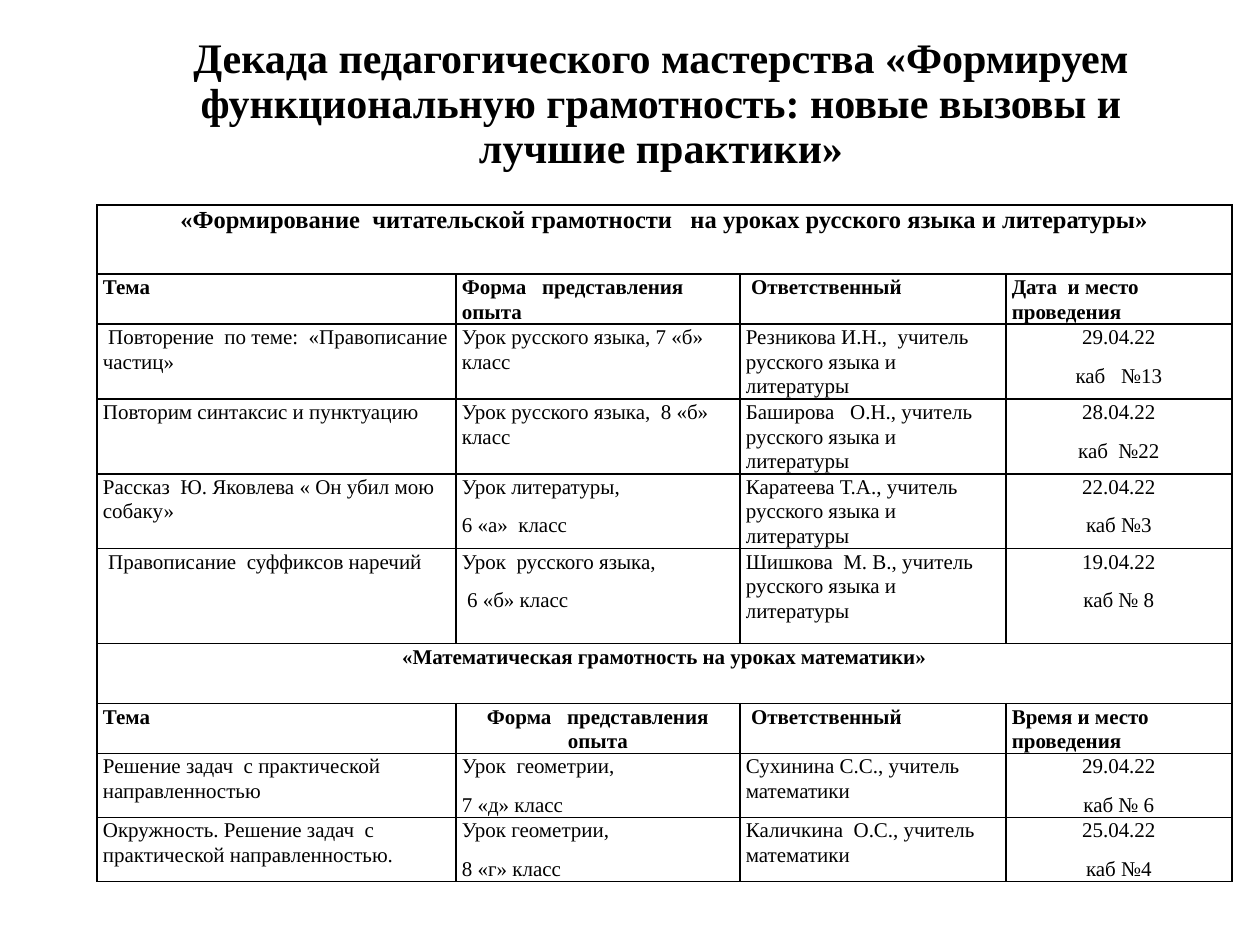
from lxml.etree import SubElement
from pptx import Presentation
from pptx.dml.color import RGBColor
from pptx.enum.text import MSO_ANCHOR, MSO_AUTO_SIZE, PP_ALIGN
from pptx.oxml.ns import qn
from pptx.util import Pt

PX = 914400 // 126
FONT = "Times New Roman"
BLACK = "000000"
LEFT, CENTER = PP_ALIGN.LEFT, PP_ALIGN.CENTER

TITLE = ("Декада педагогического мастерства «Формируем функциональную "
         "грамотность: новые вызовы и лучшие практики»")
SECTIONS = [
    {
        "heading": "«Формирование  читательской грамотности   на уроках русского языка и литературы»",
        "heading_size": 14,
        "columns": ["Тема", "Форма   представления опыта", " Ответственный", "Дата  и место проведения"],
        "column_aligns": [LEFT, LEFT, LEFT, LEFT],
        "lessons": [
            [" Повторение  по теме:  «Правописание частиц»", "Урок русского языка, 7 «б»  класс",
             "Резникова И.Н.,  учитель русского языка и  литературы", "29.04.22\nкаб   №13"],
            ["Повторим синтаксис и пунктуацию", "Урок русского языка,  8 «б» класс",
             "Баширова   О.Н., учитель русского языка и литературы", "28.04.22\nкаб  №22"],
            ["Рассказ  Ю. Яковлева « Он убил мою собаку»", "Урок литературы,\n6 «а»  класс",
             "Каратеева Т.А., учитель русского языка и литературы", "22.04.22\nкаб №3"],
            [" Правописание  суффиксов наречий", "Урок  русского языка,\n 6 «б» класс",
             "Шишкова  М. В., учитель русского языка и литературы", "19.04.22\nкаб № 8"],
        ],
    },
    {
        "heading": "«Математическая грамотность на уроках математики»",
        "heading_size": 12,
        "columns": ["Тема", "Форма   представления опыта", " Ответственный", "Время и место проведения"],
        "column_aligns": [LEFT, CENTER, LEFT, LEFT],
        "lessons": [
            ["Решение задач  с практической направленностью", "Урок  геометрии,\n7 «д» класс",
             "Сухинина С.С., учитель математики", "29.04.22\nкаб № 6"],
            ["Окружность. Решение задач  с практической направленностью.", "Урок геометрии,\n8 «г» класс",
             "Каличкина  О.С., учитель математики", "25.04.22\nкаб №4"],
        ],
    },
]
LESSON_ALIGNS = [LEFT, LEFT, LEFT, CENTER]
COLUMN_WIDTHS = [359, 284, 266, 226]
ROW_HEIGHTS = [69, 50, 75, 75, 75, 95, 60, 50, 64, 64]


def color(value):
    return RGBColor.from_string(value)


def write(frame, text, size=12, bold=False, align=LEFT, spacing=1.07, after=8):
    frame.word_wrap = True
    for index, line in enumerate(text.split("\n")):
        paragraph = frame.paragraphs[0] if index == 0 else frame.add_paragraph()
        paragraph.alignment = align
        paragraph.line_spacing = spacing
        paragraph.space_before = Pt(0)
        paragraph.space_after = Pt(after)
        run = paragraph.add_run()
        run.text = line
        run.font.name = FONT
        run.font.size = Pt(size)
        run.font.bold = bold
        run.font.color.rgb = color(BLACK)


def style_cell(cell):
    cell.margin_left = cell.margin_right = 6 * PX
    cell.margin_top = cell.margin_bottom = 0
    cell.vertical_anchor = MSO_ANCHOR.TOP
    properties = cell._tc.get_or_add_tcPr()
    for side in ("a:lnL", "a:lnR", "a:lnT", "a:lnB"):
        border = SubElement(properties, qn(side), w=str(Pt(1)))
        fill = SubElement(border, qn("a:solidFill"))
        SubElement(fill, qn("a:srgbClr"), val=BLACK)
    cell.fill.background()


def write_row(table, row, texts, aligns, bold=False):
    for column, (text, align) in enumerate(zip(texts, aligns)):
        write(table.cell(row, column).text_frame, text, bold=bold, align=align)


def add_schedule(slide):
    table = slide.shapes.add_table(
        len(ROW_HEIGHTS), len(COLUMN_WIDTHS), 97 * PX, 205 * PX,
        sum(COLUMN_WIDTHS) * PX, sum(ROW_HEIGHTS) * PX).table
    table.first_row = table.horz_banding = False
    for column, width in zip(table.columns, COLUMN_WIDTHS):
        column.width = width * PX
    for row, height in zip(table.rows, ROW_HEIGHTS):
        row.height = height * PX
    for cell in table.iter_cells():
        style_cell(cell)

    row = 0
    for section in SECTIONS:
        heading = table.cell(row, 0)
        heading.merge(table.cell(row, len(COLUMN_WIDTHS) - 1))
        write(heading.text_frame, section["heading"], size=section["heading_size"],
              bold=True, align=CENTER)
        write_row(table, row + 1, section["columns"], section["column_aligns"], bold=True)
        row += 2
        for lesson in section["lessons"]:
            write_row(table, row, lesson, LESSON_ALIGNS)
            row += 1


def main():
    deck = Presentation()
    deck.slide_width, deck.slide_height = 1260 * PX, 945 * PX
    slide = deck.slides.add_slide(deck.slide_layouts[5])
    title = slide.shapes.title
    title.left, title.top, title.width, title.height = 118 * PX, 21 * PX, 1086 * PX, 168 * PX
    title.text_frame.auto_size = MSO_AUTO_SIZE.NONE
    title.text_frame.vertical_anchor = MSO_ANCHOR.MIDDLE
    write(title.text_frame, TITLE, size=24, bold=True, align=CENTER, spacing=0.9, after=0)
    add_schedule(slide)
    deck.save("out.pptx")


if __name__ == "__main__":
    main()
